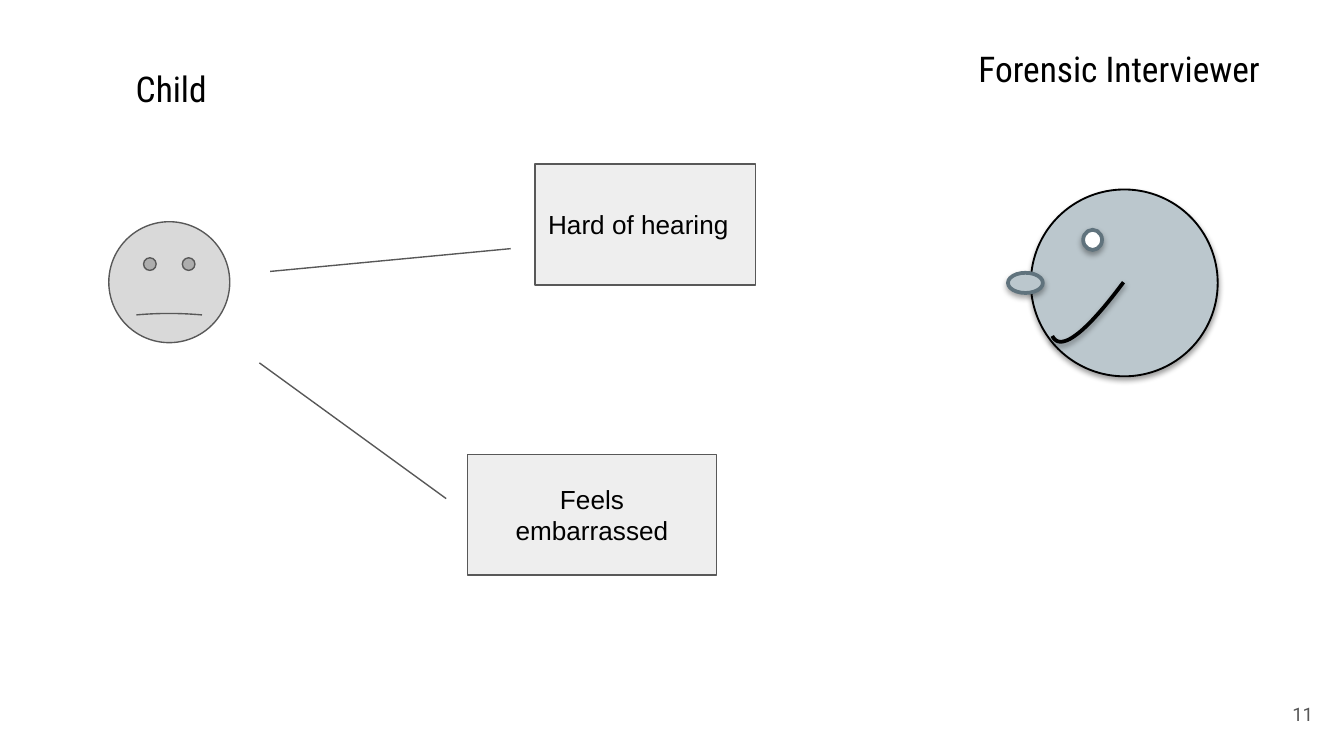
from dataclasses import dataclass

from lxml import etree
from pptx import Presentation
from pptx.dml.color import RGBColor
from pptx.enum import shapes, text
from pptx.oxml import ns
from pptx.util import Inches, Pt


@dataclass(frozen=True)
class Theme:
    black: RGBColor = RGBColor(0, 0, 0)
    white: RGBColor = RGBColor(0xFF, 0xFF, 0xFF)
    outline: RGBColor = RGBColor(0x58, 0x58, 0x58)
    child: RGBColor = RGBColor(0xD9, 0xD9, 0xD9)
    reason: RGBColor = RGBColor(0xEE, 0xEE, 0xEE)
    adult: RGBColor = RGBColor(0xBB, 0xC7, 0xCD)
    adult_outline: RGBColor = RGBColor(0x60, 0x73, 0x7D)
    heading_size: Pt = Pt(19)
    reason_size: Pt = Pt(14)
    number_size: Pt = Pt(10)


theme = Theme()


def paint(shape, fill, line, width, shadow_alpha=None):
    """Set fill and outline; with an alpha in percent, add a soft shadow below."""
    if fill is None:
        shape.fill.background()
    else:
        shape.fill.solid()
        shape.fill.fore_color.rgb = fill
    shape.line.color.rgb = line
    shape.line.width = Pt(width)
    shape.shadow.inherit = False
    if shadow_alpha:
        effects = shape.element.spPr.find(ns.qn("a:effectLst"))
        shadow = etree.SubElement(
            effects, ns.qn("a:outerShdw"), blurRad=str(Pt(3)), dist=str(Pt(1.7)),
            dir="5400000", rotWithShape="0")
        color = etree.SubElement(shadow, ns.qn("a:srgbClr"), val="000000")
        etree.SubElement(color, ns.qn("a:alpha"), val=str(shadow_alpha * 1000))


def write(shape, lines, font, size, color, align, anchor, indent=0):
    frame = shape.text_frame
    frame.word_wrap = True
    frame.vertical_anchor = anchor
    frame.margin_left = Inches(0.1 + indent)
    frame.margin_right = frame.margin_top = frame.margin_bottom = Inches(0.1)
    frame.text = "\n".join(lines)
    for para in frame.paragraphs:
        para.alignment = align
        para.font.name = font
        para.font.size = size
        para.font.color.rgb = color
    return frame


deck = Presentation()
deck.slide_width = Inches(10)
deck.slide_height = deck.slide_width * 9 // 16
page = deck.slides.add_slide(deck.slide_layouts[6])
oval = shapes.MSO_SHAPE.OVAL
left, center, right = text.PP_ALIGN.LEFT, text.PP_ALIGN.CENTER, text.PP_ALIGN.RIGHT
top, middle = text.MSO_ANCHOR.TOP, text.MSO_ANCHOR.MIDDLE

# Headings
for heading, place, indent in [
    ("Forensic Interviewer", (5.18, 0.25, 4.82, 0.52), 2),
    ("Child", (0.31, 0.4, 6.88, 0.52), 0.6),
]:
    box = page.shapes.add_textbox(*map(Inches, place))
    write(box, [heading], "Roboto Condensed", theme.heading_size, theme.black,
          left, top, indent)

# Child's face, with a slightly turned-down mouth
child = page.shapes.add_shape(shapes.MSO_SHAPE.SMILEY_FACE,
                              *map(Inches, (0.81, 1.65, 0.9, 0.9)))
child.adjustments[0] = -0.006
paint(child, theme.child, theme.outline, 0.75)

# Lines from the child to the reasons
for ends in [(1.93, 2.7, 3.32, 3.71), (2.01, 2.02, 3.8, 1.85)]:
    link = page.shapes.add_connector(shapes.MSO_CONNECTOR.STRAIGHT,
                                     *map(Inches, ends))
    link.line.color.rgb = theme.outline
    link.line.width = Pt(0.75)
    etree.SubElement(link.element.spPr, ns.qn("a:effectLst"))

# Interviewer's face in profile: head, eye, mouth, nose
head = page.shapes.add_shape(oval, *map(Inches, (7.67, 1.41, 1.39, 1.39)))
paint(head, theme.adult, theme.black, 1, 38)

eye = page.shapes.add_shape(oval, *map(Inches, (8.06, 1.71, 0.14, 0.15)))
paint(eye, theme.white, theme.adult_outline, 2, 35)

mouth_curve = [(8.36, 2.1), (8.07, 2.49), (7.89, 2.62), (7.83, 2.5)]
steps = 30
points = []
for step in range(steps + 1):
    t = step / steps
    weights = ((1 - t) ** 3, 3 * t * (1 - t) ** 2, 3 * t ** 2 * (1 - t), t ** 3)
    points.append(tuple(
        Inches(sum(weight * value for weight, value in zip(weights, axis)))
        for axis in zip(*mouth_curve)))
builder = page.shapes.build_freeform(*points[0])
builder.add_line_segments(points[1:], close=False)
paint(builder.convert_to_shape(), None, theme.black, 2, 38)

nose = page.shapes.add_shape(oval, *map(Inches, (7.5, 2.03, 0.26, 0.15)))
paint(nose, theme.adult, theme.adult_outline, 2, 35)

# Reasons
for lines, place, align in [
    (["Hard of hearing"], (3.98, 1.22, 1.64, 0.9), left),
    (["Feels", "embarrassed"], (3.48, 3.38, 1.85, 0.9), center),
]:
    reason = page.shapes.add_shape(shapes.MSO_SHAPE.RECTANGLE, *map(Inches, place))
    paint(reason, theme.reason, theme.outline, 0.75)
    write(reason, lines, "Arial", theme.reason_size, theme.black, align, middle)

# Slide number
number = page.shapes.add_textbox(*map(Inches, (9.51, 5.14, 0.36, 0.35)))
write(number, ["11"], "Roboto", theme.number_size, theme.outline,
      right, middle).word_wrap = False

deck.save("out.pptx")
